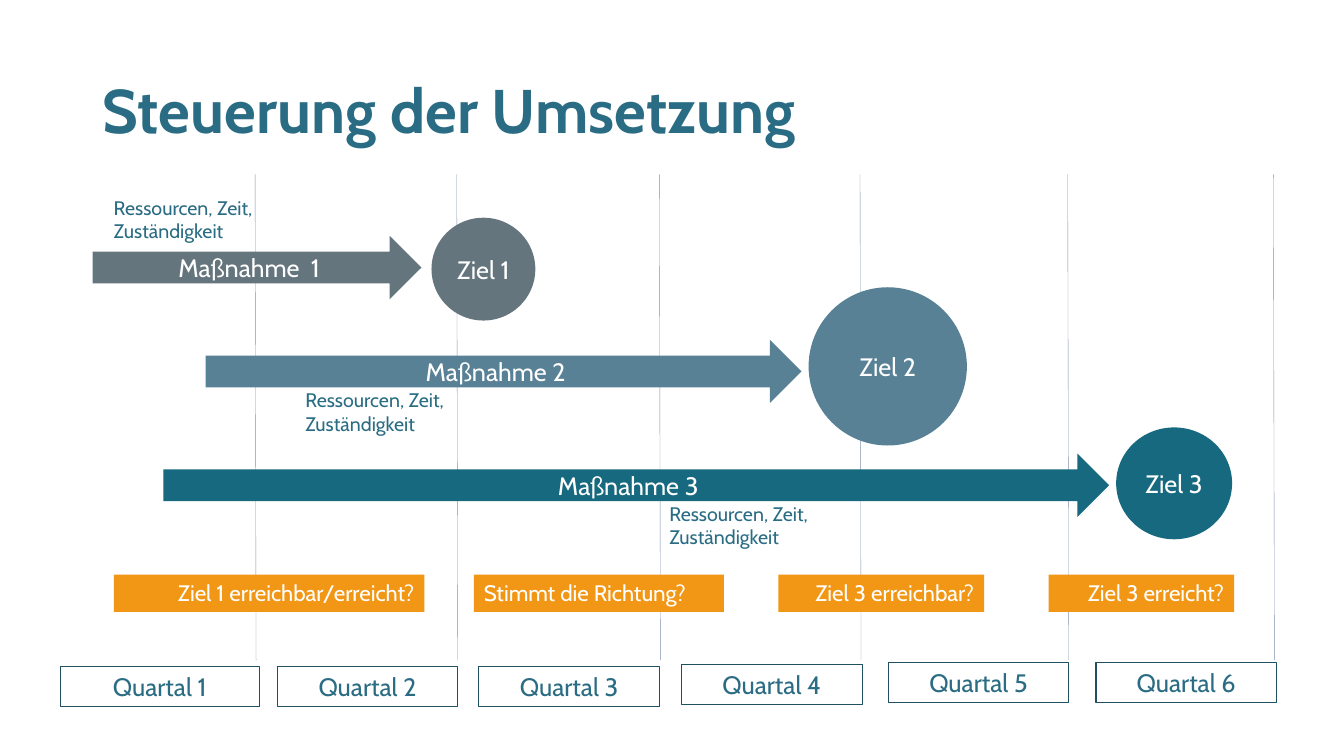
"""Build the slide that shows how measures and goals are steered over six quarters."""
from lxml import etree
from pptx import Presentation
from pptx.dml.color import RGBColor
from pptx.enum.shapes import MSO_CONNECTOR, MSO_SHAPE
from pptx.enum.text import MSO_ANCHOR, MSO_AUTO_SIZE, PP_ALIGN
from pptx.oxml.ns import qn
from pptx.util import Inches, Pt

ARROW, OVAL, RECT = MSO_SHAPE.RIGHT_ARROW, MSO_SHAPE.OVAL, MSO_SHAPE.RECTANGLE
LEFT, CENTER, RIGHT = PP_ALIGN.LEFT, PP_ALIGN.CENTER, PP_ALIGN.RIGHT
TOP, MIDDLE = MSO_ANCHOR.TOP, MSO_ANCHOR.MIDDLE
GROW, FIXED = MSO_AUTO_SIZE.SHAPE_TO_FIT_TEXT, MSO_AUTO_SIZE.NONE
STRAIGHT = MSO_CONNECTOR.STRAIGHT

THEME = {
    "font": "Cabin",
    "ink": RGBColor.from_string("2A6C83"),
    "white": RGBColor.from_string("FFFFFF"),
    "gray": RGBColor.from_string("65757D"),
    "blue": RGBColor.from_string("588195"),
    "teal": RGBColor.from_string("17697F"),
    "orange": RGBColor.from_string("F29715"),
    "frame": RGBColor.from_string("1F5061"),
    "grid": RGBColor.from_string("002060"),
    "title": Pt(44),
    "label": Pt(18),
    "check": Pt(16),
    "note": Pt(14),
}


def write(shape, text, size, color, align=LEFT, anchor=TOP, fit=GROW, bold=False):
    """Fill a shape with one formatted paragraph and return the paragraph."""
    frame = shape.text_frame
    para = frame.paragraphs[0]
    run = para.add_run()
    run.text = text
    para.alignment = align
    for name, value in {"word_wrap": True, "vertical_anchor": anchor,
                        "auto_size": fit}.items():
        setattr(frame, name, value)
    for name, value in {"name": THEME["font"], "size": size, "bold": bold}.items():
        setattr(run.font, name, value)
    run.font.color.rgb = color
    return para


def draw(kind, box, fill=None):
    """Add a preset shape, filled without a line or framed without a fill."""
    shape = slide.shapes.add_shape(kind, *map(Inches, box))
    shape.shadow.inherit = False
    if fill:
        shape.fill.solid()
        shape.fill.fore_color.rgb = fill
        shape.line.fill.background()
    else:
        shape.fill.background()
        shape.line.color.rgb = THEME["frame"]
        shape.line.width = Pt(0.75)
    return shape


deck = Presentation()
deck.slide_width, deck.slide_height = Inches(13.33), Inches(7.5)
slide = deck.slides.add_slide(deck.slide_layouts[6])

for x in (2.54, 4.54, 6.55, 8.54, 10.6, 12.64):
    rule = slide.shapes.add_connector(
        STRAIGHT, Inches(x), Inches(6.55), Inches(x - 0.01), Inches(1.73))
    rule.line.color.rgb = THEME["grid"]
    rule.line.width = Pt(0.25)
    tint = rule.line.fill._xPr.find(".//" + qn("a:srgbClr"))
    etree.SubElement(tint, qn("a:alpha"), val="50000")
    etree.SubElement(rule._element.spPr, qn("a:effectLst"))

title = slide.shapes.add_textbox(*map(Inches, (0.92, 0.4, 11.5, 1.45)))
head = write(title, "Steuerung der Umsetzung", THEME["title"], THEME["ink"],
             anchor=MIDDLE, fit=FIXED, bold=True)
head.line_spacing = 0.9

steps = [
    ("Maßnahme  1", (0.92, 2.34, 3.26, 0.63), "Ziel 1", (4.28, 2.16, 1.03, 1.02), "gray"),
    ("Maßnahme 2", (2.04, 3.37, 5.91, 0.63), "Ziel 2", (8.02, 2.85, 1.57, 1.57), "blue"),
    ("Maßnahme 3", (1.62, 4.5, 9.38, 0.63), "Ziel 3", (11.07, 4.24, 1.15, 1.11), "teal"),
]
for task, bar, goal, disc, tone in steps:
    for kind, text, box in ((ARROW, task, bar), (OVAL, goal, disc)):
        write(draw(kind, box, THEME[tone]), text, THEME["label"], THEME["white"],
              CENTER, MIDDLE, FIXED)

terms = [(0.6, 6.61, 1.97), (2.75, 6.61, 1.79), (4.75, 6.61, 1.79),
         (6.76, 6.59, 1.79), (8.81, 6.57, 1.79), (10.87, 6.57, 1.79)]
for count, (x, y, width) in enumerate(terms, 1):
    write(draw(RECT, (x, y, width, 0.4)), f"Quartal {count}", THEME["label"],
          THEME["ink"], CENTER)

for x, y in ((1.03, 1.89), (2.93, 3.8), (6.54, 4.93)):
    note = slide.shapes.add_textbox(*map(Inches, (x, y, 2.4, 0.57)))
    write(note, "Ressourcen, Zeit, Zuständigkeit", THEME["note"], THEME["ink"])

checks = [
    ("Ziel 1 erreichbar/erreicht?", 1.13, 3.08, RIGHT),
    ("Stimmt die Richtung?", 4.7, 2.48, LEFT),
    ("Ziel 3 erreichbar?", 7.72, 2.04, RIGHT),
    ("Ziel 3 erreicht?", 10.4, 1.84, RIGHT),
]
for text, x, width, align in checks:
    write(draw(RECT, (x, 5.7, width, 0.37), THEME["orange"]), text, THEME["check"],
          THEME["white"], align)

deck.save("out.pptx")
